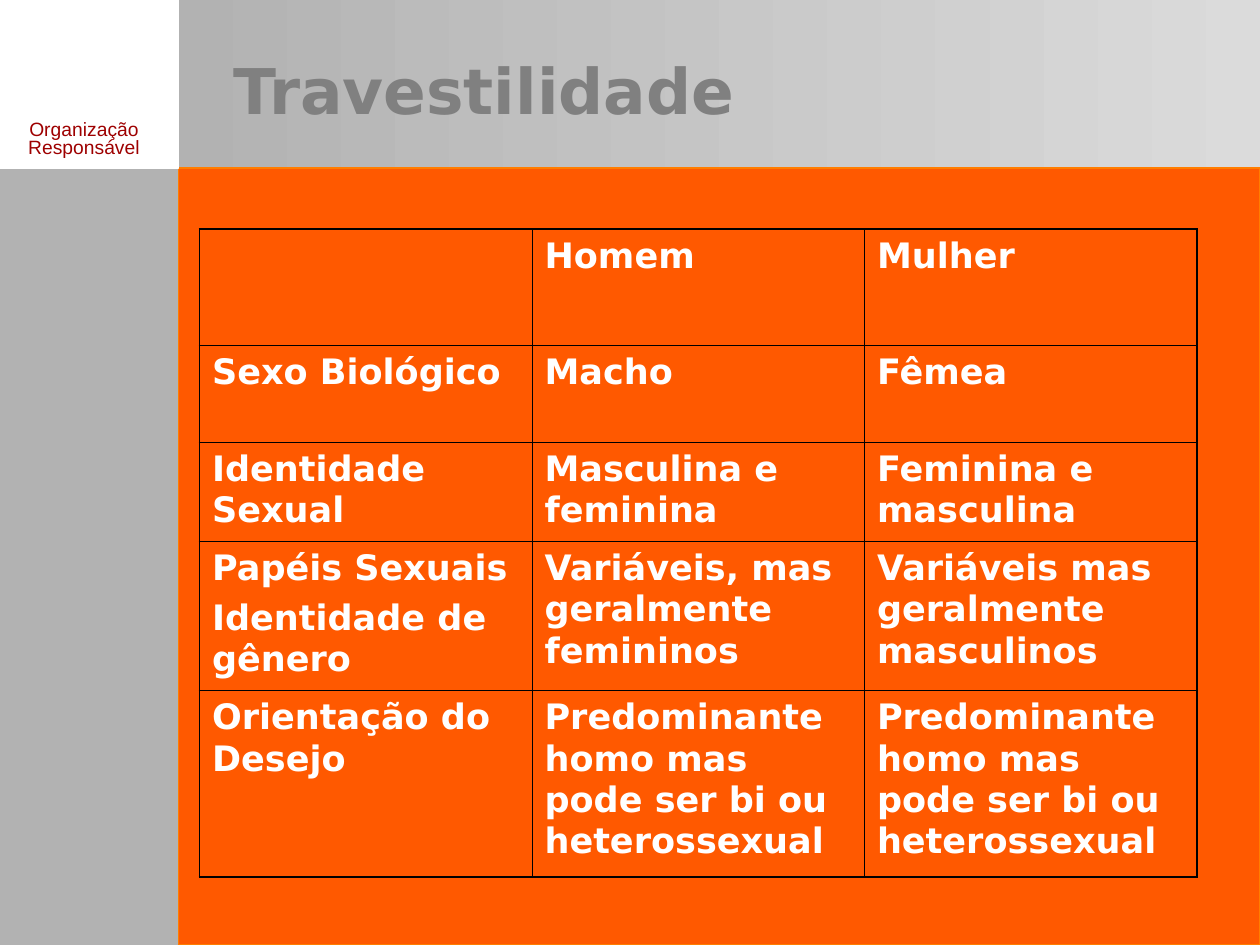
from dataclasses import dataclass

from lxml.etree import SubElement
from pptx import Presentation
from pptx.dml.color import RGBColor as Rgb
from pptx.enum.shapes import MSO_SHAPE as Preset
from pptx.enum.text import MSO_ANCHOR as Anchor, MSO_AUTO_SIZE as AutoSize, PP_ALIGN as Align
from pptx.oxml.ns import qn
from pptx.util import Inches, Pt


@dataclass(frozen=True)
class Theme:
    """Colours, fonts, type sizes and line widths of the slide."""
    white: str = "FFFFFF"
    light_grey: str = "DBDBDB"
    grey: str = "B2B2B2"
    title_grey: str = "808080"
    orange: str = "FF5900"
    orange_edge: str = "FF7D00"
    dark_red: str = "9E0000"
    black: str = "000000"
    heading_font: str = "DejaVu Sans"
    label_font: str = "Arial"
    title_size: int = 36
    table_size: int = 20
    label_size: int = 11
    edge: float = 0.75
    inner_border: float = 0.45
    outer_border: float = 1.08


def write(frame, text, *, size, color, font, bold=False, align=Align.LEFT,
          spacing=None, before=0):
    """Fill a text frame with one formatted paragraph per line of text."""
    frame.word_wrap = True
    for index, line in enumerate(text.split("\n")):
        paragraph = frame.add_paragraph() if index else frame.paragraphs[0]
        paragraph.alignment = align
        paragraph.line_spacing = spacing
        if index and before:
            paragraph.space_before = Pt(before)
        run = paragraph.add_run()
        run.text = line
        run.font.name, run.font.size, run.font.bold = font, Pt(size), bold
        run.font.color.rgb = Rgb.from_string(color)


class SlideBuilder:
    """Draws on one slide, measuring in a grid of 120 columns by 90 rows."""

    def __init__(self, deck, theme):
        """Add a title-only slide to the deck."""
        self.theme = theme
        self.cell_size = Inches(10) / 120
        deck.slide_width, deck.slide_height = self.units(120, 90)
        self.slide = deck.slides.add_slide(deck.slide_layouts[5])
        self.shapes = self.slide.shapes

    def units(self, *counts):
        """Turn grid counts into lengths."""
        return [round(count * self.cell_size) for count in counts]

    def panel(self, *place, fill, edge=None, fade_to=None):
        """Draw a rectangle, plain or fading from right to left."""
        panel = self.shapes.add_shape(Preset.RECTANGLE, *self.units(*place))
        panel.shadow.inherit = False
        if fade_to:
            panel.fill.gradient()
            panel.fill.gradient_angle = 180
            for stop, color in zip(panel.fill.gradient_stops, (fill, fade_to)):
                stop.color.rgb = Rgb.from_string(color)
        else:
            panel.fill.solid()
            panel.fill.fore_color.rgb = Rgb.from_string(fill)
        if edge:
            panel.line.color.rgb = Rgb.from_string(edge)
            panel.line.width = Pt(self.theme.edge)
        else:
            panel.line.fill.background()

    def title(self, text, *place):
        """Place the title in front of the panels drawn so far."""
        title = self.shapes.title
        self.shapes.element.append(title.element)
        title.left, title.top, title.width, title.height = self.units(*place)
        title.text_frame.auto_size = AutoSize.NONE
        title.text_frame.vertical_anchor = Anchor.MIDDLE
        write(title.text_frame, text, size=self.theme.title_size, bold=True,
              color=self.theme.title_grey, font=self.theme.heading_font)

    def label(self, text, *place):
        """Write a small centred label."""
        label = self.shapes.add_textbox(*self.units(*place)).text_frame
        write(label, text, size=self.theme.label_size, color=self.theme.dark_red,
              font=self.theme.label_font, align=Align.CENTER, spacing=0.8)

    def border(self, cell, outer_sides):
        """Rule the four sides of a cell, heavier on the outer ones."""
        properties = cell._tc.get_or_add_tcPr()
        for side in "LRTB":
            weight = self.theme.outer_border if side in outer_sides else self.theme.inner_border
            rule = SubElement(properties, qn(f"a:ln{side}"), w=str(Pt(weight)))
            SubElement(SubElement(rule, qn("a:solidFill")), qn("a:srgbClr"),
                       val=self.theme.black)

    def table(self, rows, left, top, width, heights):
        """Draw a ruled table with equal columns and no fill."""
        last_row, last_column = len(rows) - 1, len(rows[0]) - 1
        place = self.units(left, top, width, sum(heights))
        grid = self.shapes.add_table(len(rows), len(rows[0]), *place).table
        grid.first_row = grid.horz_banding = False
        for row, height in zip(grid.rows, self.units(*heights)):
            row.height = height
        for r, texts in enumerate(rows):
            for c, text in enumerate(texts):
                cell = grid.cell(r, c)
                outer = {"L": c == 0, "R": c == last_column, "T": r == 0, "B": r == last_row}
                self.border(cell, [side for side, is_outer in outer.items() if is_outer])
                cell.fill.background()
                if text:
                    write(cell.text_frame, text, size=self.theme.table_size, bold=True,
                          color=self.theme.white, font=self.theme.heading_font,
                          spacing=1.01, before=5)


def main():
    """Build and save the slide."""
    deck = Presentation()
    theme = Theme()
    page = SlideBuilder(deck, theme)
    side, head = 17, 16
    page.panel(side, 0, 120 - side, 90, fill=theme.light_grey, fade_to=theme.grey)
    page.panel(0, head, side, 90 - head, fill=theme.grey, edge=theme.grey)
    page.panel(side, head, 120 - side, 90 - head, fill=theme.orange, edge=theme.orange_edge)
    page.title("Travestilidade", 21, 3, 95.75, 11)

    desire = "Predominante homo mas pode ser bi ou heterossexual"
    page.table([
        ("", "Homem", "Mulher"),
        ("Sexo Biológico", "Macho", "Fêmea"),
        ("Identidade Sexual", "Masculina e feminina", "Feminina e masculina"),
        ("Papéis Sexuais\nIdentidade de gênero", "Variáveis, mas geralmente femininos",
         "Variáveis mas geralmente masculinos"),
        ("Orientação do Desejo", desire, desire),
    ], 19, 21.84, 95, (11.05, 9.25, 9.45, 14.2, 17.75))

    page.panel(0, 0, side, head, fill=theme.white, edge=theme.white)
    page.label("Organização\nResponsável", 0, 11, head, 4.8)
    deck.save("out.pptx")


if __name__ == "__main__":
    main()
